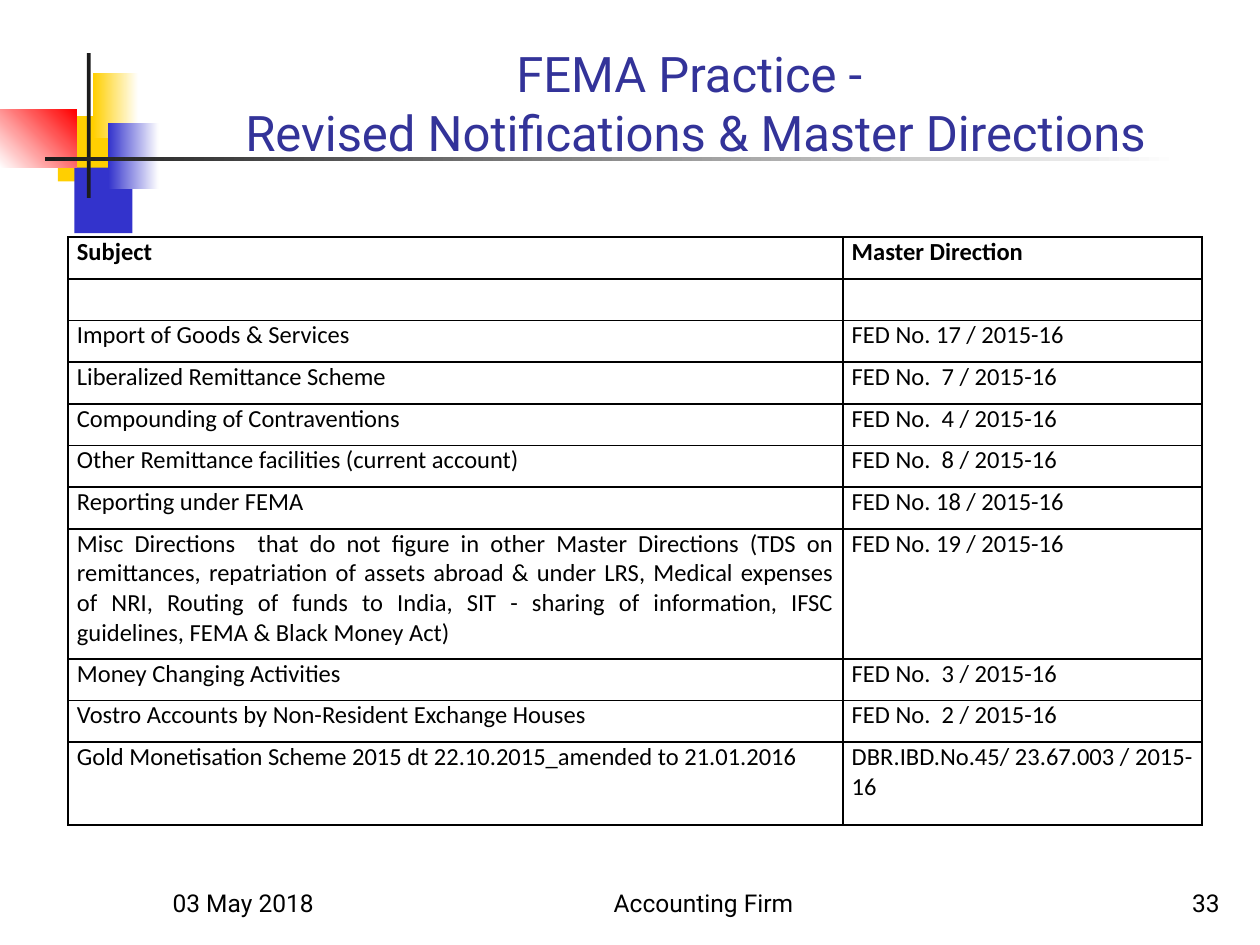
import pptx
import pptx.dml.color
import pptx.enum.shapes
import pptx.enum.text
import pptx.oxml
import pptx.oxml.ns
import pptx.util

Cm = pptx.util.Cm
Pt = pptx.util.Pt
RGBColor = pptx.dml.color.RGBColor
ALIGN = pptx.enum.text.PP_ALIGN
ANCHOR = pptx.enum.text.MSO_ANCHOR

BLACK = RGBColor(0x00, 0x00, 0x00)
WHITE = RGBColor(0xFF, 0xFF, 0xFF)
CHARCOAL = RGBColor(0x1C, 0x1C, 0x1C)
YELLOW = RGBColor(0xFF, 0xCF, 0x01)
BLUE = RGBColor(0x33, 0x33, 0xCC)
RED = RGBColor(0xFF, 0x00, 0x00)
NAVY = RGBColor(0x33, 0x33, 0x99)

DIRECTIONS = [
    ("Subject", "Master Direction"),
    ("", ""),
    ("Import of Goods & Services", "FED No. 17 / 2015-16"),
    ("Liberalized Remittance Scheme", "FED No.  7 / 2015-16"),
    ("Compounding of Contraventions", "FED No.  4 / 2015-16"),
    ("Other Remittance facilities (current account)", "FED No.  8 / 2015-16"),
    ("Reporting under FEMA", "FED No. 18 / 2015-16"),
    ("Misc Directions  that do not figure in other Master Directions "
     "(TDS on remittances, repatriation of assets abroad & under LRS, "
     "Medical expenses of NRI, Routing of funds to India, SIT - sharing of "
     "information, IFSC guidelines, FEMA & Black Money Act) ",
     "FED No. 19 / 2015-16"),
    ("Money Changing Activities", "FED No.  3 / 2015-16"),
    ("Vostro Accounts by Non-Resident Exchange Houses", "FED No.  2 / 2015-16"),
    ("Gold Monetisation Scheme 2015 dt 22.10.2015_amended to 21.01.2016",
     "DBR.IBD.No.45/ 23.67.003 / 2015-16"),
]
ROW_HEIGHT = 0.84
TALL_ROWS = {7: 2.62, 10: 1.67}


def write(frame, text, *, font="Roboto", size=14, color=BLACK, bold=False,
          align=ALIGN.LEFT):
    paragraph = frame.paragraphs[0]
    paragraph.text = text
    paragraph.alignment = align
    for run in paragraph.runs:
        run.font.name = font
        run.font.size = Pt(size)
        run.font.bold = bold
        run.font.color.rgb = color


class SlideBuilder:
    body_font = "Calibri"
    cell_inset = 0.18
    border_width = 1

    def __init__(self, slide):
        self.slide = slide

    def block(self, left, top, width, height, color, end_color=None, angle=0):
        block = self.slide.shapes.add_shape(
            pptx.enum.shapes.MSO_SHAPE.RECTANGLE,
            Cm(left), Cm(top), Cm(width), Cm(height))
        block.shadow.inherit = False
        block.line.fill.background()
        if end_color is None:
            block.fill.solid()
            block.fill.fore_color.rgb = color
            return
        block.fill.gradient()
        block.fill.gradient_angle = angle
        for stop, stop_color in zip(block.fill.gradient_stops, (color, end_color)):
            stop.color.rgb = stop_color

    def label(self, left, top, width, height, text, **style):
        frame = self.slide.shapes.add_textbox(
            Cm(left), Cm(top), Cm(width), Cm(height)).text_frame
        frame.word_wrap = True
        frame.vertical_anchor = ANCHOR.BOTTOM
        write(frame, text, **style)

    def border(self, cell):
        properties = cell._tc.get_or_add_tcPr()
        for side in ("lnL", "lnR", "lnT", "lnB"):
            properties.append(pptx.oxml.parse_xml(
                f'<a:{side} {pptx.oxml.ns.nsdecls("a")} w="{Pt(self.border_width)}">'
                f'<a:solidFill><a:srgbClr val="{BLACK}"/></a:solidFill></a:{side}>'))

    def table(self, left, top, widths, heights, entries):
        table = self.slide.shapes.add_table(
            len(heights), len(widths), Cm(left), Cm(top),
            Cm(sum(widths)), Cm(sum(heights))).table
        for column, width in zip(table.columns, widths):
            column.width = Cm(width)
        for index, (row, height) in enumerate(zip(table.rows, heights)):
            row.height = Cm(height)
            for cell, text in zip(row.cells, entries[index]):
                cell.margin_left = cell.margin_right = Cm(self.cell_inset)
                cell.margin_top = cell.margin_bottom = 0
                self.border(cell)
                cell.fill.background()
                write(cell.text_frame, text, font=self.body_font,
                      bold=index == 0, align=ALIGN.JUSTIFY)


def main():
    deck = pptx.Presentation()
    deck.slide_width, deck.slide_height = Cm(25.4), Cm(19.05)
    builder = SlideBuilder(deck.slides.add_slide(deck.slide_layouts[6]))

    builder.block(1.17, 2.34, 1.22, 1.32, YELLOW)
    builder.block(1.5, 3.38, 1.17, 1.32, BLUE)
    builder.block(1.88, 1.47, 0.91, 1.32, YELLOW, WHITE)
    builder.block(2.18, 2.49, 1.02, 1.32, BLUE, WHITE)
    builder.block(0, 2.21, 1.55, 1.17, WHITE, RED, angle=45)
    builder.block(1.75, 1.07, 0.08, 2.92, CHARCOAL)
    builder.block(0.91, 3.17, 22.86, 0.08, CHARCOAL, WHITE)

    footer_top, footer_height = 17.35, 1.27
    builder.label(3.23, footer_top, 5.28, footer_height, "03 May 2018")
    builder.label(10.16, footer_top, 8.05, footer_height, "Accounting Firm",
                  align=ALIGN.CENTER)
    builder.label(19.56, footer_top, 5.28, footer_height, "33", align=ALIGN.RIGHT)
    builder.label(3.2, 0.58, 21.64, 2.79,
                  "FEMA Practice - \vRevised Notifications & Master Directions",
                  size=28, color=NAVY, align=ALIGN.CENTER)

    heights = [TALL_ROWS.get(index, ROW_HEIGHT) for index in range(len(DIRECTIONS))]
    builder.table(1.37, 4.78, (15.62, 7.24), heights, DIRECTIONS)
    deck.save("out.pptx")


if __name__ == "__main__":
    main()
